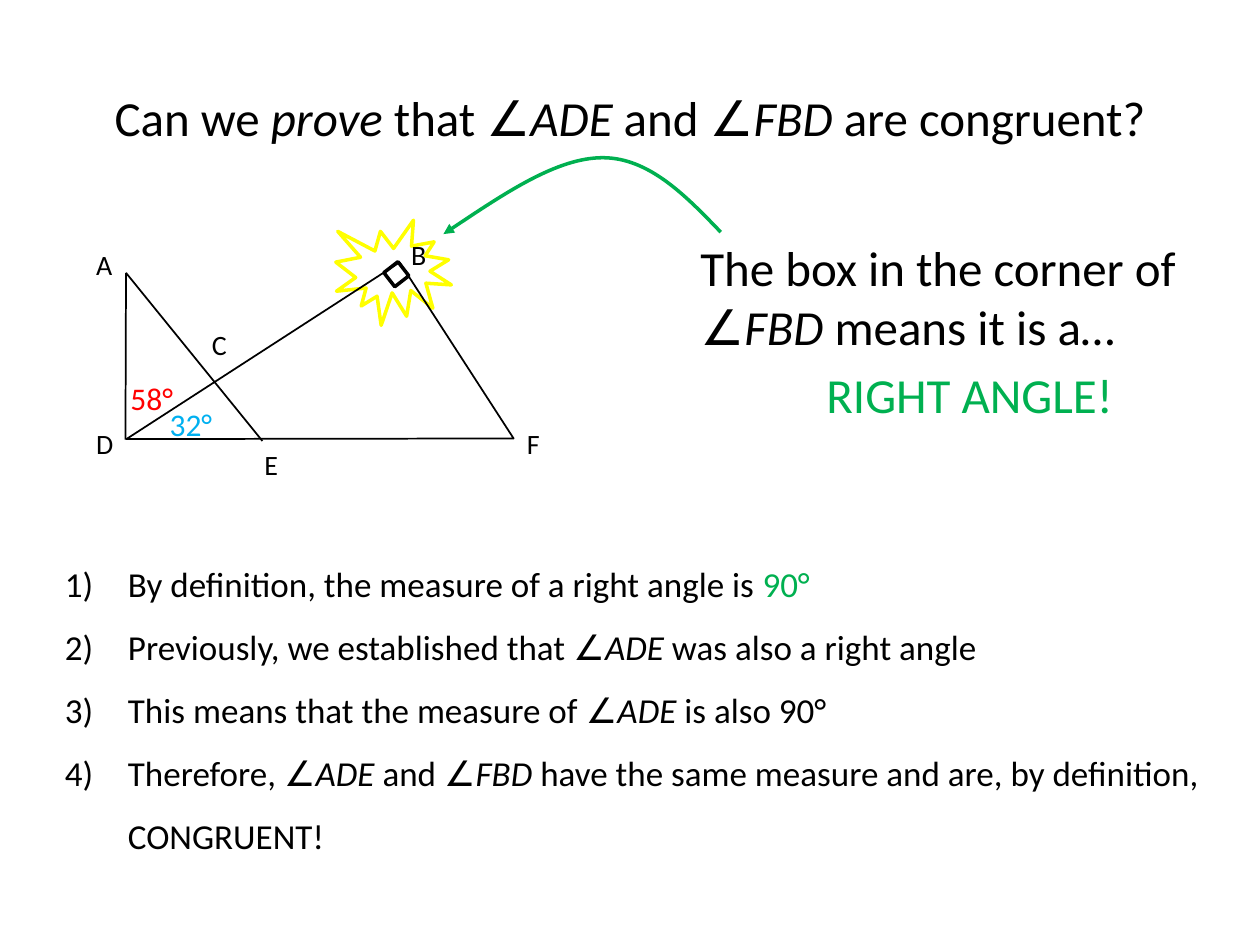
import pptx
import pptx.dml.color
import pptx.enum.shapes
import pptx.enum.text
import pptx.oxml
import pptx.oxml.ns
import pptx.util
from lxml import etree

Cm, Pt = pptx.util.Cm, pptx.util.Pt
SHAPE = pptx.enum.shapes.MSO_SHAPE
qn = pptx.oxml.ns.qn

# Content: a paragraph is a list of (text, colour); *stars* mark italics
BLACK, GREEN, RED, BLUE, YELLOW = "000000", "00B050", "FF0000", "00B0F0", "FFFF00"
TITLE = [("Can we *prove* that ∠*ADE* and ∠*FBD* are congruent?", BLACK)]
HINT = [("The box in the corner of ∠*FBD* means it is a…", BLACK)]
ANSWER = [("RIGHT ANGLE!", GREEN)]
STEPS = [
    [("By definition, the measure of a right angle is ", BLACK), ("90°", GREEN)],
    [("Previously, we established that ∠*ADE* was also a right angle", BLACK)],
    [("This means that the measure of ∠*ADE* is also 90°", BLACK)],
    [("Therefore, ∠*ADE* and ∠*FBD* have the same measure and are, "
      "by definition, CONGRUENT!", BLACK)],
]

# Diagram, in cm
A, D, E = (2.54, 5.5), (2.53, 8.86), (5.29, 8.89)
SIDES = [(A, E), (D, A)]
# Outlines: kind, box, rotation, line colour, line width
BURST = (SHAPE.EXPLOSION1, (6.77, 4.44, 2.33, 2.12), 0, YELLOW, 2)
TRIANGLE_DBF = (SHAPE.RIGHT_TRIANGLE, (3.17, 6.73, 6.56, 4.23), 147.1, BLACK, 1)
RIGHT_ANGLE_MARK = (SHAPE.RECTANGLE, (7.81, 5.35, 0.36, 0.36), 52.2, BLACK, 2)
VERTICES = {"A": (1.69, 4.87), "B": (8.04, 4.66), "C": (4.02, 6.47),
            "D": (1.69, 8.47), "E": (5.08, 8.89), "F": (10.37, 8.47)}
ANGLES = [("58°", RED, (2.38, 7.51)), ("32°", BLUE, (3.17, 8.04))]
ARROW = [(14.53, 4.68),  # start, then two Bézier segments
         (13.82, 3.94), (13.08, 3.18), (12.15, 3.18),
         (11.23, 3.18), (10.08, 3.96), (8.94, 4.72)]


def rgb(value):
    return pptx.dml.color.RGBColor.from_string(value)


def set_line(s, colour, width):
    s.line.color.rgb = rgb(colour)
    s.line.width = Pt(width)


def add_runs(p, parts, size):
    for text, colour in parts:
        for i, piece in enumerate(text.split("*")):
            if piece:
                r = p.add_run()
                r.text = piece
                r.font.name = "Calibri"
                r.font.size = Pt(size)
                r.font.italic = i % 2 == 1
                r.font.color.rgb = rgb(colour)


def add_text(s, box, paragraphs, size):
    tf = s.shapes.add_textbox(*map(Cm, box)).text_frame
    tf.word_wrap = True
    for i, parts in enumerate(paragraphs):
        p = tf.add_paragraph() if i else tf.paragraphs[0]
        add_runs(p, parts, size)
    return tf


def set_indent(p, left, first=0):
    pPr = p._p.get_or_add_pPr()
    pPr.set("marL", str(Cm(left)))
    pPr.set("indent", str(Cm(first)))
    return pPr


def add_outline(s, kind, box, rotation, colour, width):
    sp = s.shapes.add_shape(kind, *map(Cm, box))
    sp.rotation = rotation
    sp.shadow.inherit = False
    sp.fill.background()
    set_line(sp, colour, width)


def add_curved_arrow(s, points, colour, width):
    start, *rest = [(Cm(x), Cm(y)) for x, y in points]
    builder = s.shapes.build_freeform(*start)
    builder.add_line_segments(rest, close=False)
    sp = builder.convert_to_shape()
    sp.shadow.inherit = False
    sp.fill.background()
    set_line(sp, colour, width)
    # Each three line points become one cubic curve
    steps = list(sp._element.iter(qn("a:lnTo")))
    for i in range(0, len(steps), 3):
        curve = etree.SubElement(steps[i].getparent(), qn("a:cubicBezTo"))
        for step in steps[i:i + 3]:
            curve.append(step[0])
            step.getparent().remove(step)
    etree.SubElement(sp.line._get_or_add_ln(), qn("a:tailEnd"), type="triangle")


prs = pptx.Presentation()
prs.slide_width, prs.slide_height = Cm(25.4), Cm(19.05)
s = prs.slides.add_slide(prs.slide_layouts[6])

add_outline(s, *BURST)

# Title
tf = add_text(s, (1.27, 0.76, 22.86, 3.18), [TITLE], 28)
tf.vertical_anchor = pptx.enum.text.MSO_ANCHOR.MIDDLE
tf.paragraphs[0].alignment = pptx.enum.text.PP_ALIGN.CENTER

# Hint and its answer
tf = add_text(s, (12.91, 4.66, 11.22, 4.66), [HINT, ANSWER], 28)
for p, left in zip(tf.paragraphs, (0.96, 3.5)):
    set_indent(p, left)
    p.space_before = Pt(5.6)

# Triangles
add_outline(s, *TRIANGLE_DBF)
for start, end in SIDES:
    side = s.shapes.add_connector(pptx.enum.shapes.MSO_CONNECTOR.STRAIGHT,
                                  *map(Cm, start + end))
    set_line(side, BLACK, 1)
    etree.SubElement(side._element.spPr, qn("a:effectLst"))

# Vertex and angle labels
for letter, at in VERTICES.items():
    add_text(s, at + (1.07, 0.93), [[(letter, BLACK)]], 16)
for angle, colour, at in ANGLES:
    add_text(s, at + (1.48, 1.02), [[(angle, colour)]], 18)

add_outline(s, *RIGHT_ANGLE_MARK)
add_curved_arrow(s, ARROW, GREEN, 2)

# Numbered proof
tf = add_text(s, (1.06, 10.8, 23.5, 7.52), STEPS, 20)
for p in tf.paragraphs:
    p.line_spacing = 1.5
    etree.SubElement(set_indent(p, 1.27, -1.27), qn("a:buAutoNum"), type="arabicParenR")

prs.save("out.pptx")
